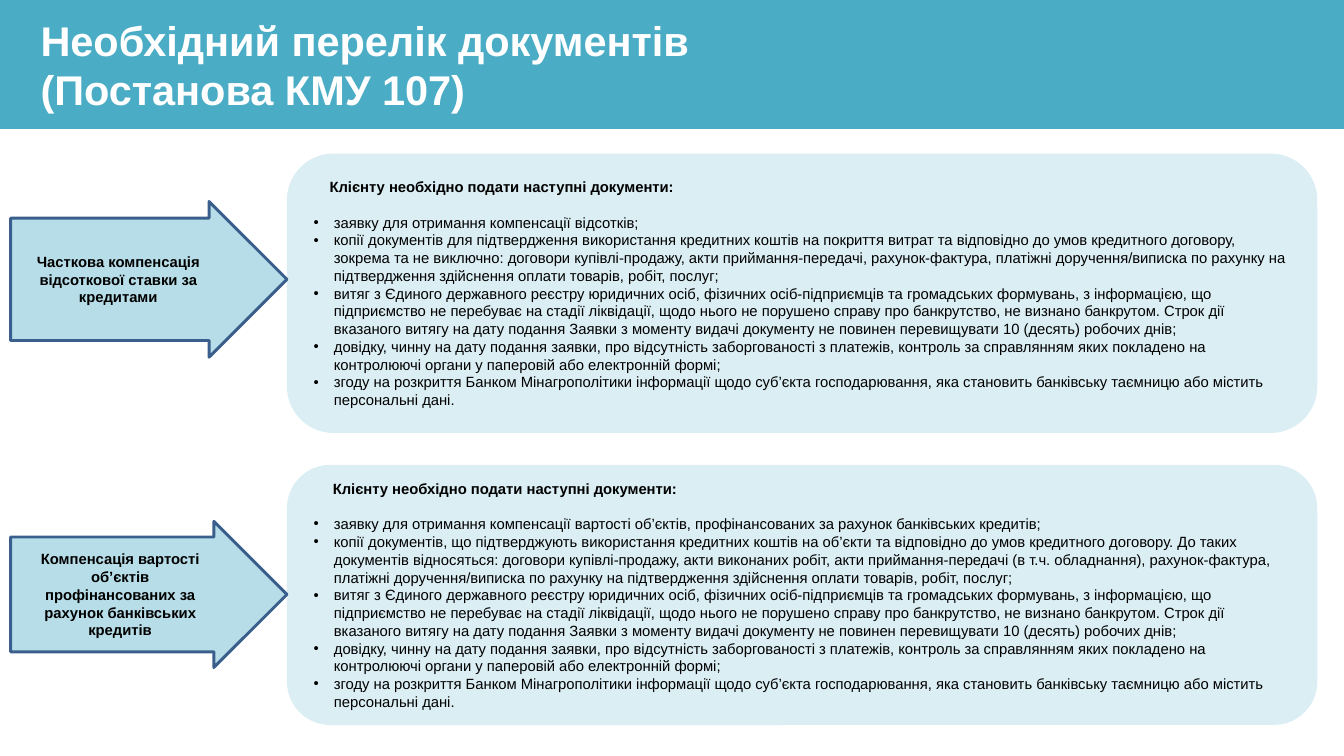
"""Build the slide listing the documents clients must submit."""
from lxml.etree import SubElement
from pptx import Presentation
from pptx.dml.color import RGBColor
from pptx.enum.shapes import MSO_SHAPE
from pptx.enum.text import MSO_ANCHOR, MSO_AUTO_SIZE, PP_ALIGN
from pptx.oxml.ns import qn
from pptx.util import Inches, Pt

TITLE = ["Необхідний перелік документів", "(Постанова КМУ 107)"]
HEADING = "Клієнту необхідно подати наступні документи:"
SHARED = [
    "витяг з Єдиного державного реєстру юридичних осіб, фізичних осіб-підприємців та "
    "громадських формувань, з інформацією, що підприємство не перебуває на стадії "
    "ліквідації, щодо нього не порушено справу про банкрутство, не визнано банкрутом. "
    "Строк дії вказаного витягу на дату подання Заявки з моменту видачі документу не "
    "повинен перевищувати 10 (десять) робочих днів;",
    "довідку, чинну на дату подання заявки, про відсутність заборгованості з платежів, "
    "контроль за справлянням яких покладено на контролюючі органи у паперовій або "
    "електронній формі;",
    "згоду на розкриття Банком Мінагрополітики інформації щодо суб’єкта господарювання, "
    "яка становить банківську таємницю або містить персональні дані.",
]
PROGRAMS = [
    {
        "label": "Часткова компенсація відсоткової ставки за кредитами",
        "items": [
            "заявку для отримання компенсації відсотків;",
            "копії документів для підтвердження використання кредитних коштів на покриття "
            "витрат та відповідно до умов кредитного договору, зокрема та не виключно: "
            "договори купівлі-продажу, акти приймання-передачі, рахунок-фактура, платіжні "
            "доручення/виписка по рахунку на підтвердження здійснення оплати товарів, "
            "робіт, послуг;",
        ],
        "arrow": (1.89, 1.46), "card": (1.44, 2.62), "indent": 0.15,
    },
    {
        "label": "Компенсація вартості об’єктів профінансованих за рахунок "
                 "банківських кредитів",
        "items": [
            "заявку для отримання компенсації вартості об’єктів, профінансованих за "
            "рахунок банківських кредитів;",
            "копії документів, що підтверджують використання кредитних коштів на об’єкти "
            "та відповідно до умов кредитного договору. До таких документів відносяться: "
            "договори купівлі-продажу, акти виконаних робіт, акти приймання-передачі "
            "(в т.ч. обладнання), рахунок-фактура, платіжні доручення/виписка по рахунку "
            "на підтвердження здійснення оплати товарів, робіт, послуг;",
        ],
        "arrow": (4.89, 1.37), "card": (4.36, 2.44), "indent": 0.18,
    },
]
COLORS = {"band": "4BACC6", "arrow": "B7DEE8", "edge": "3A5F8C",
          "card": "DBEEF4", "text": "000000", "title": "FFFFFF"}
WIDTH, HEIGHT, BAND = 12.6, 7.09, 1.21
ARROW_X, ARROW_W, CARD_W = 0.1, 2.59, 9.66
CARD_X = ARROW_X + ARROW_W
LEADING = 1.2


def color(name):
    return RGBColor.from_string(COLORS[name])


def place(shape, x, y, w, h):
    shape.left, shape.top = Inches(x), Inches(y)
    shape.width, shape.height = Inches(w), Inches(h)


def set_frame(shape, side=0.13):
    frame = shape.text_frame
    frame.word_wrap = True
    frame.auto_size = MSO_AUTO_SIZE.NONE
    frame.vertical_anchor = MSO_ANCHOR.MIDDLE
    frame.margin_left = frame.margin_right = Inches(side)
    frame.margin_top = frame.margin_bottom = Inches(0.06)
    return frame


def write(frame, text, size=10, ink="text", bold=False, align=PP_ALIGN.LEFT,
          margin=0, hang=0, after=0, bullet=False):
    para = frame.paragraphs[0] if not frame.text else frame.add_paragraph()
    para.alignment = align
    para.line_spacing = Pt(size * LEADING)
    para.space_before, para.space_after = Pt(0), Pt(after)
    props = para._p.get_or_add_pPr()
    props.set("marL", str(Inches(margin)))
    props.set("indent", str(Inches(hang)))
    if bullet:
        SubElement(props, qn("a:buFont"), typeface="Arial")
        SubElement(props, qn("a:buChar"), char="•")
    else:
        SubElement(props, qn("a:buNone"))
    run = para.add_run()
    run.text = text
    font = run.font
    font.name, font.size, font.bold = "Arial", Pt(size), bold
    font.color.rgb = color(ink)


def add_box(slide, kind, x, y, w, h, fill, edge=None):
    box = slide.shapes.add_shape(kind, Inches(x), Inches(y), Inches(w), Inches(h))
    box.shadow.inherit = False
    box.fill.solid()
    box.fill.fore_color.rgb = color(fill)
    if edge:
        box.line.color.rgb = color(edge)
        box.line.width = Pt(2)
    else:
        box.line.fill.background()
    return box


def add_program(slide, body, program):
    y, h = program["arrow"]
    arrow = add_box(slide, MSO_SHAPE.RIGHT_ARROW, ARROW_X, y, ARROW_W, h,
                    "arrow", edge="edge")
    arrow.adjustments[0] = 0.786
    write(set_frame(arrow), program["label"], bold=True, align=PP_ALIGN.CENTER)

    y, h = program["card"]
    card = add_box(slide, MSO_SHAPE.ROUNDED_RECTANGLE, CARD_X, y, CARD_W, h, "card")
    body.element.addprevious(card.element)
    place(body, CARD_X, y, CARD_W, h)
    frame = set_frame(body, side=0.25)
    write(frame, HEADING, bold=True, margin=program["indent"], after=12)
    for item in program["items"] + SHARED:
        write(frame, item, margin=0.19, hang=-0.19, bullet=True)


def main():
    deck = Presentation()
    deck.slide_width, deck.slide_height = Inches(WIDTH), Inches(HEIGHT)
    slide = deck.slides.add_slide(deck.slide_layouts[3])
    title, *bodies = slide.placeholders
    place(title, 0, 0, WIDTH, BAND)
    title.fill.solid()
    title.fill.fore_color.rgb = color("band")
    frame = set_frame(title)
    for line in TITLE:
        write(frame, line, size=28, ink="title", bold=True, margin=0.25)
    for body, program in zip(bodies, PROGRAMS):
        add_program(slide, body, program)
    deck.save("out.pptx")


if __name__ == "__main__":
    main()
